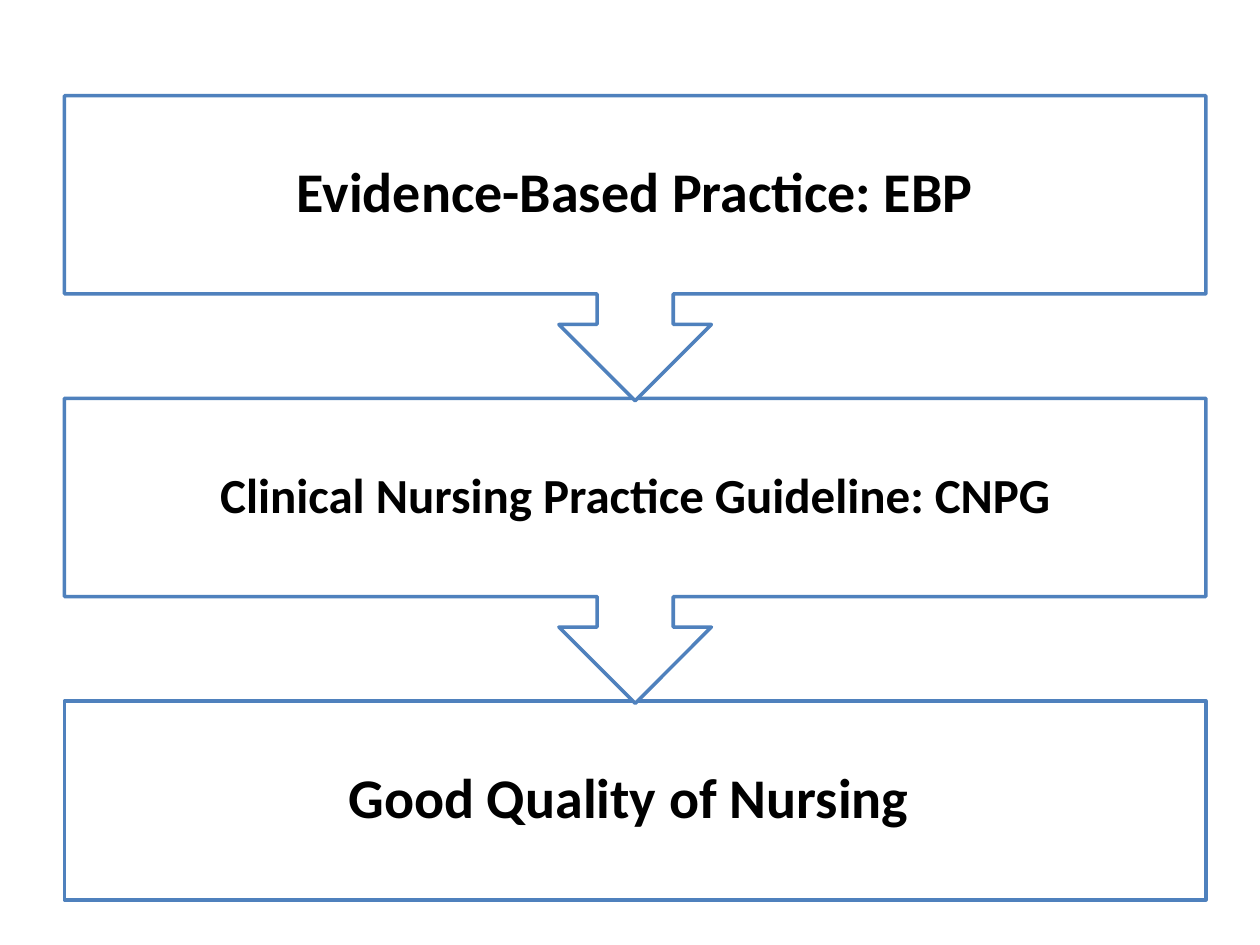
"""Build a slide with three steps leading from evidence to good nursing."""
from pptx import Presentation
from pptx.dml.color import RGBColor
from pptx.enum.shapes import MSO_SHAPE as Shape
from pptx.enum.text import MSO_ANCHOR as Anchor, PP_ALIGN as Align
from pptx.util import Cm, Pt


def color(hex_code):
    return RGBColor.from_string(hex_code)


deck = Presentation()
deck.slide_width, deck.slide_height = Cm(25.4), Cm(19.05)
slide = deck.slides.add_slide(deck.slide_layouts[6])

left, first_top, width, pitch = 1.3, 1.93, 23.01, 6.1
callout_height, last_height = 6.15, 4.01
steps = [
    ("Evidence-Based Practice: EBP", 32, 0.63),
    ("Clinical Nursing Practice Guideline: CNPG", 28, 0.55),
    ("Good Quality of Nursing ", 32, 0.63),
]
last = len(steps) - 1

for row, (wording, size, inset) in reversed(list(enumerate(steps))):
    outline = Shape.RECTANGLE if row == last else Shape.DOWN_ARROW_CALLOUT
    height = last_height if row == last else callout_height
    step = slide.shapes.add_shape(
        outline, Cm(left), Cm(first_top + row * pitch), Cm(width), Cm(height)
    )
    step.shadow.inherit = False
    step.fill.solid()
    step.fill.fore_color.rgb = color("FFFFFF")
    step.line.color.rgb = color("4F81BD")
    step.line.width = Pt(2)

    frame = step.text_frame
    frame.text = wording
    frame.word_wrap = True
    frame.vertical_anchor = Anchor.MIDDLE
    frame.margin_left = frame.margin_right = Cm(inset)
    frame.margin_top = frame.margin_bottom = Cm(inset)
    paragraph = frame.paragraphs[0]
    paragraph.alignment = Align.CENTER
    paragraph.line_spacing = 0.9
    font = paragraph.runs[0].font
    font.name, font.size, font.bold = "Calibri", Pt(size), True
    font.color.rgb = color("000000")

deck.save("out.pptx")
